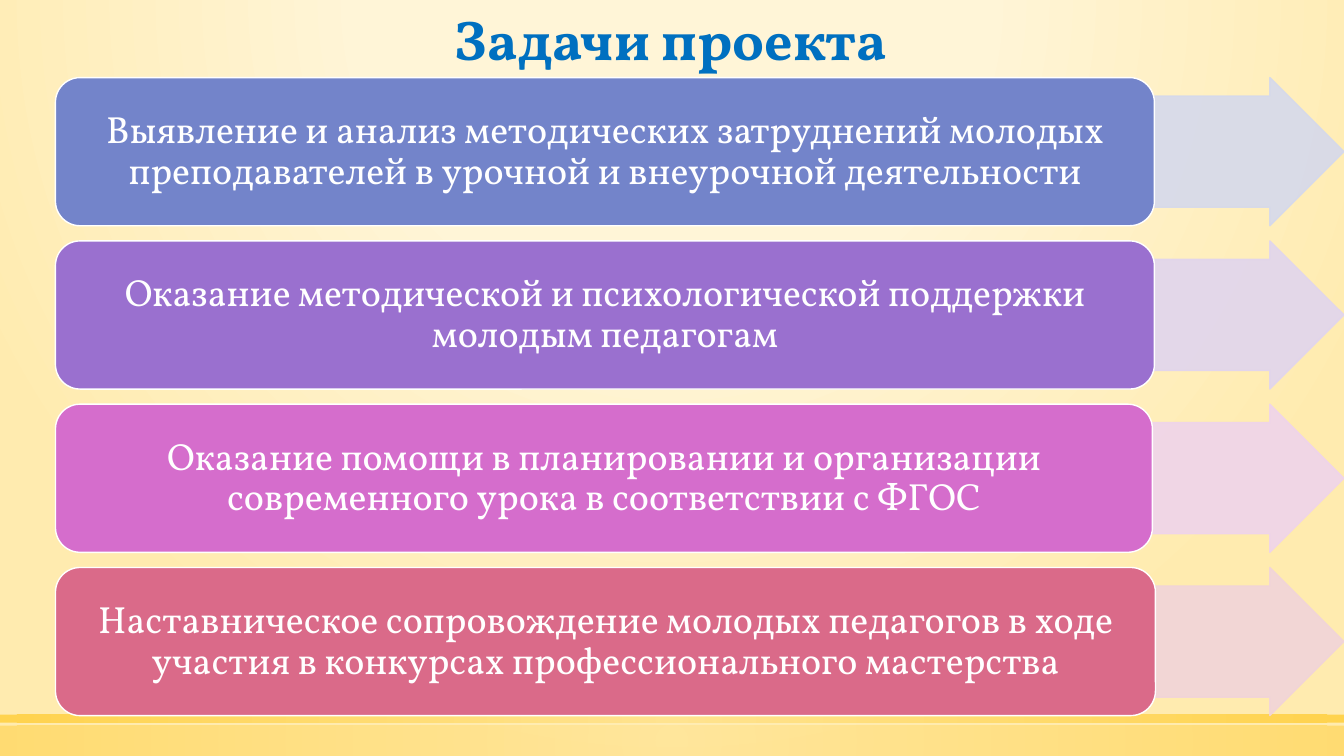
from lxml import etree
from pptx import Presentation
from pptx.dml.color import RGBColor
from pptx.enum.shapes import MSO_SHAPE as Shape
from pptx.enum.text import MSO_ANCHOR as Anchor, PP_ALIGN as Align
from pptx.oxml import parse_xml
from pptx.oxml.ns import nsdecls, qn
from pptx.util import Inches, Pt

SLIDE_WIDTH, SLIDE_HEIGHT = 13.33, 7.5
FONT = "Vollkorn"
COLORS = {
    "title": "0070C0",
    "white": "FFFFFF",
    "cream": "FFF5D7",
    "sand": "FFEBAF",
    "light gold": "FFE186",
    "gold": "FFCD36",
    "blue": "7384CA",
    "pale blue": "D5D9EC",
    "violet": "9A70CF",
    "pale violet": "E1D5EE",
    "pink": "D56DCC",
    "pale pink": "EFD4EB",
    "rose": "DA6A89",
    "pale rose": "F1D4DA",
}
# Text, colour and box width of each task
TASKS = [
    ("Выявление и анализ методических затруднений молодых "
     "преподавателей в урочной и внеурочной деятельности", "blue", 10.9),
    ("Оказание методической и психологической поддержки "
     "молодым педагогам", "violet", 10.9),
    ("Оказание помощи в планировании и организации "
     "современного урока в соответствии с ФГОС", "pink", 10.88),
    ("Наставническое сопровождение молодых педагогов в ходе "
     "участия в конкурсах профессионального мастерства", "rose", 10.91),
]


def rgb(name):
    return RGBColor.from_string(COLORS[name])


def set_radial_gradient(owner, stops, center):
    """Give a slide or shape a circular gradient.

    Stops are (position, colour, opacity) in percent; center is the
    left, top, right and bottom of the focus in percent.
    """
    fill = owner.background.fill if hasattr(owner, "background") else owner.fill
    fill.solid()
    solid = owner.element.find(".//" + qn("a:solidFill"))
    stop_xml = "".join(
        f'<a:gs pos="{position * 1000}"><a:srgbClr val="{COLORS[color]}">'
        f'<a:alpha val="{opacity * 1000}"/></a:srgbClr></a:gs>'
        for position, color, opacity in stops)
    left, top, right, bottom = (side * 1000 for side in center)
    gradient = parse_xml(
        f'<a:gradFill {nsdecls("a")} rotWithShape="1"><a:gsLst>{stop_xml}</a:gsLst>'
        f'<a:path path="circle"><a:fillToRect l="{left}" t="{top}" '
        f'r="{right}" b="{bottom}"/></a:path></a:gradFill>')
    solid.getparent().replace(solid, gradient)


def set_opacity(shape, percent):
    """Apply one opacity to the fill and the line of a shape."""
    for color in shape.element.spPr.iter(qn("a:srgbClr")):
        etree.SubElement(color, qn("a:alpha"), val=str(percent * 1000))


def add_plain_shape(page, kind, box, fill=None, line=None):
    shape = page.shapes.add_shape(kind, *map(Inches, box))
    shape.shadow.inherit = False
    if fill:
        shape.fill.solid()
        shape.fill.fore_color.rgb = rgb(fill)
    if line:
        shape.line.color.rgb = rgb(line)
        shape.line.width = Pt(1)
    else:
        shape.line.fill.background()
    return shape


def write(shape, text, *, size, color, bold=False, anchor=Anchor.MIDDLE,
          margins=(0.1, 0.05)):
    """Put one centred paragraph in a shape; margins are side and top."""
    frame = shape.text_frame
    frame.word_wrap = True
    frame.vertical_anchor = anchor
    frame.margin_left = frame.margin_right = Inches(margins[0])
    frame.margin_top = frame.margin_bottom = Inches(margins[1])
    para = frame.paragraphs[0]
    para.alignment = Align.CENTER
    para.line_spacing = 0.9
    span = para.add_run()
    span.text = text
    span.font.name = FONT
    span.font.size = Pt(size)
    span.font.bold = bold
    span.font.color.rgb = rgb(color)


def add_backdrop(page):
    set_radial_gradient(
        page, [(0, "cream", 59), (40, "cream", 66), (100, "sand", 100)],
        (50, -80, 50, 180))
    for top, height, opacity in ((7.2, 0.3, 50), (7.09, 0.08, 80)):
        band = add_plain_shape(page, Shape.RECTANGLE, (0, top, SLIDE_WIDTH, height))
        set_radial_gradient(
            band, [(0, "light gold", opacity), (100, "gold", opacity)],
            (50, 50, 50, 50))


def add_title(page, box):
    title = page.shapes.add_textbox(*map(Inches, box))
    write(title, "Задачи проекта", size=40, color="title", bold=True,
          anchor=Anchor.BOTTOM)


def add_task(page, box, text, color, card_width):
    """Draw a card at the left of the box and an arrow over the rest."""
    left, top, width, height = box
    arrow = add_plain_shape(
        page, Shape.RIGHT_ARROW,
        (left + card_width, top, width - card_width, height),
        fill="pale " + color, line="pale " + color)
    arrow.adjustments[0], arrow.adjustments[1] = 0.75, 0.5
    set_opacity(arrow, 90)
    card = add_plain_shape(page, Shape.ROUNDED_RECTANGLE,
                           (left, top, card_width, height),
                           fill=color, line="white")
    write(card, text, size=27, color="white", margins=(0.11, 0.06))


def add_task_list(page, box, pitch=1.62, row_height=1.47):
    left, top, width = box
    for row, task in enumerate(TASKS):
        add_task(page, (left, top + row * pitch, width, row_height), *task)


def main():
    deck = Presentation()
    deck.slide_width, deck.slide_height = Inches(SLIDE_WIDTH), Inches(SLIDE_HEIGHT)
    page = deck.slides.add_slide(deck.slide_layouts[6])
    add_backdrop(page)
    add_title(page, (3.39, 0.03, 6.53, 0.74))
    add_task_list(page, (0.55, 0.77, SLIDE_WIDTH - 0.55))
    deck.save("out.pptx")


if __name__ == "__main__":
    main()
